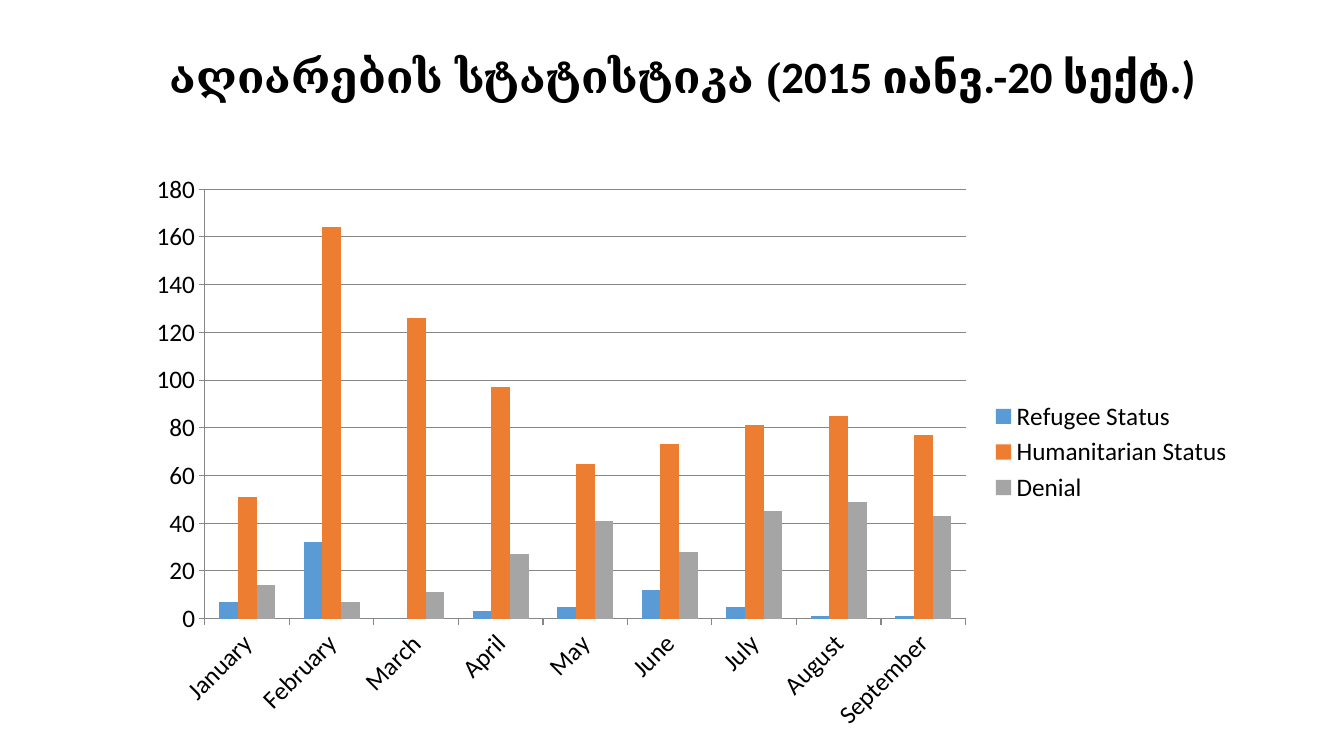
from dataclasses import dataclass

from pptx import Presentation
from pptx.chart.data import CategoryChartData
from pptx.dml.color import RGBColor
from pptx.enum.chart import XL_CHART_TYPE as ChartType
from pptx.enum.chart import XL_LEGEND_POSITION as LegendPosition
from pptx.enum.chart import XL_TICK_MARK as TickMark
from pptx.enum.text import MSO_ANCHOR as Anchor
from pptx.enum.text import MSO_AUTO_SIZE as AutoSize
from pptx.enum.text import PP_ALIGN as Align
from pptx.util import Cm, Pt


@dataclass(frozen=True)
class TitlePart:
    text: str
    font: str


@dataclass(frozen=True)
class Decision:
    name: str
    counts: tuple[int, ...]
    color: str


TITLE = (
    TitlePart("აღიარების სტატისტიკა (", "Times New Roman"),
    TitlePart("2015 იანვ.-20 სექტ.)", "Calibri"),
)
MONTHS = ("January", "February", "March", "April", "May", "June",
          "July", "August", "September")
DECISIONS = (
    Decision("Refugee Status", (7, 32, 0, 3, 5, 12, 5, 1, 1), "5B9BD5"),
    Decision("Humanitarian Status", (51, 164, 126, 97, 65, 73, 81, 85, 77), "ED7D31"),
    Decision("Denial", (14, 7, 11, 27, 41, 28, 45, 49, 43), "A5A5A5"),
)
BLACK = "000000"
AXIS_GRAY = "878787"


def color(value: str) -> RGBColor:
    return RGBColor.from_string(value)


def style_line(line) -> None:
    line.color.rgb = color(AXIS_GRAY)
    line.width = Pt(0.75)


def write_title(box) -> None:
    box.left, box.top, box.width, box.height = Cm(1.12), Cm(1.27), Cm(32.18), Cm(1.27)
    frame = box.text_frame
    frame.word_wrap = True
    frame.auto_size = AutoSize.NONE
    frame.vertical_anchor = Anchor.MIDDLE
    para = frame.paragraphs[0]
    para.alignment = Align.CENTER
    para.font.size = Pt(32)
    para.font.bold = True
    para.font.color.rgb = color(BLACK)
    for part in TITLE:
        span = para.add_run()
        span.text = part.text
        span.font.name = part.font


def draw_chart(page) -> None:
    data = CategoryChartData()
    data.categories = MONTHS
    for decision in DECISIONS:
        data.add_series(decision.name, decision.counts)
    chart = page.shapes.add_chart(
        ChartType.COLUMN_CLUSTERED, Cm(3.39), Cm(4.09), Cm(27.94), Cm(14.6), data
    ).chart
    chart.has_title = False
    chart.font.name = "Calibri"
    chart.font.size = Pt(18)
    chart.font.color.rgb = color(BLACK)

    chart.has_legend = True
    chart.legend.position = LegendPosition.RIGHT
    chart.legend.include_in_layout = False

    for axis in (chart.category_axis, chart.value_axis):
        axis.major_tick_mark = TickMark.OUTSIDE
        axis.minor_tick_mark = TickMark.NONE
        style_line(axis.format.line)
    chart.value_axis.minimum_scale = 0
    chart.value_axis.maximum_scale = 180
    chart.value_axis.major_unit = 20
    chart.value_axis.has_major_gridlines = True
    style_line(chart.value_axis.major_gridlines.format.line)

    plot = chart.plots[0]
    plot.gap_width = 150
    plot.overlap = 0
    plot.vary_by_categories = False
    for series, decision in zip(plot.series, DECISIONS):
        series.format.fill.solid()
        series.format.fill.fore_color.rgb = color(decision.color)


def main() -> None:
    deck = Presentation()
    deck.slide_width, deck.slide_height = Cm(33.87), Cm(19.05)
    page = deck.slides.add_slide(deck.slide_layouts.get_by_name("Title Only"))
    write_title(page.shapes.title)
    draw_chart(page)
    deck.save("out.pptx")


if __name__ == "__main__":
    main()
